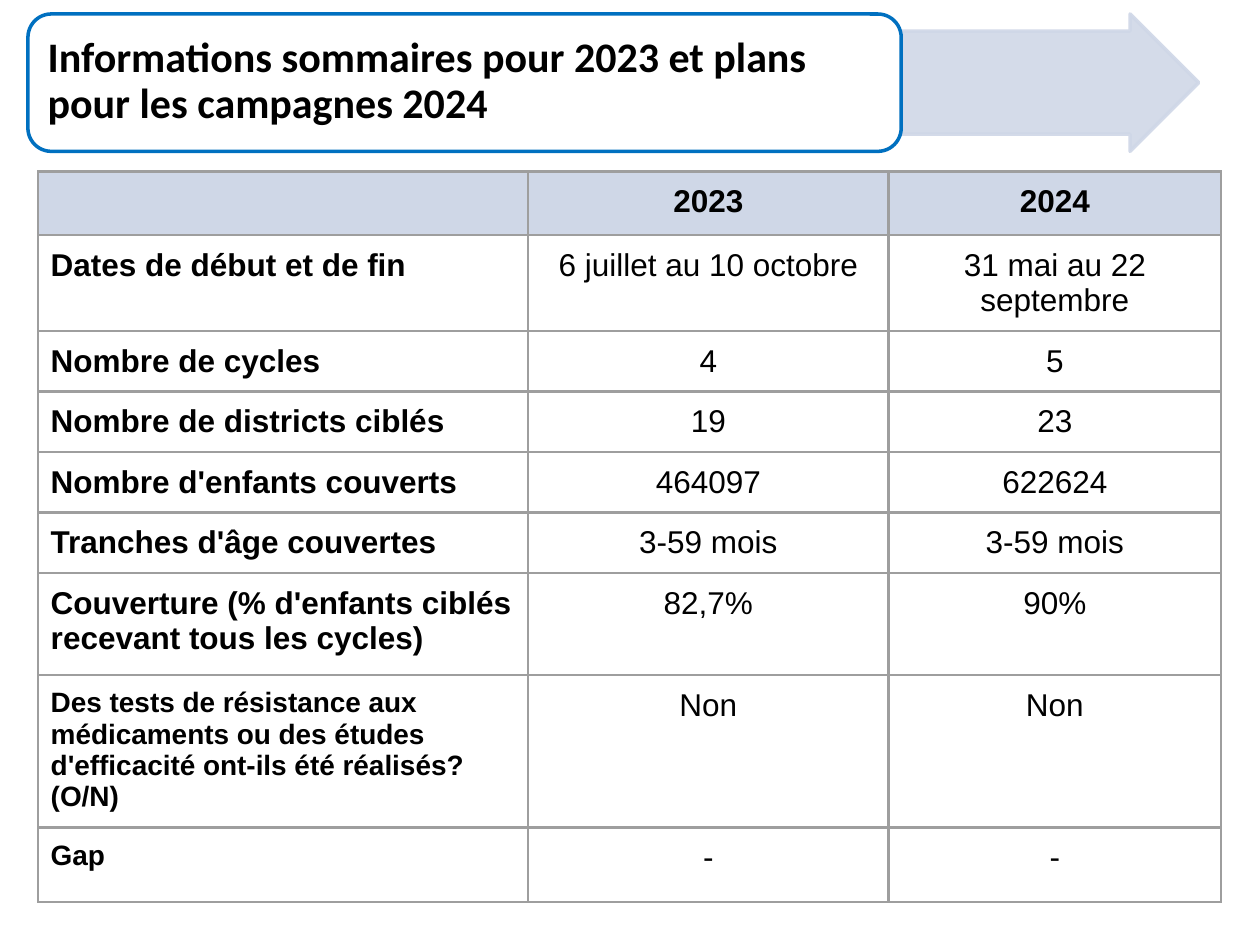
from lxml import etree
from pptx import Presentation
from pptx.dml.color import RGBColor
from pptx.enum import shapes, text
from pptx.oxml.ns import qn
from pptx.util import Pt

PALE_BLUE = "CFD7E7"
BLUE = "0070C0"
GREY = "9E9E9E"
WHITE = "FFFFFF"
BLACK = "000000"

COLUMN_WIDTHS = [280, 206, 190]
ROW_HEIGHTS = [34.6, 54.8, 34.6, 34.6, 34.6, 34.6, 58.3, 87.1, 42.5]
ROWS = [
    ("", "2023", "2024"),
    ("Dates de début et de fin", "6 juillet au 10 octobre", "31 mai au 22 septembre"),
    ("Nombre de cycles", "4", "5"),
    ("Nombre de districts ciblés", "19", "23"),
    ("Nombre d'enfants couverts", "464097", "622624"),
    ("Tranches d'âge couvertes", "3-59 mois", "3-59 mois"),
    ("Couverture (% d'enfants ciblés recevant tous les cycles)", "82,7%", "90%"),
    ("Des tests de résistance aux médicaments ou des études d'efficacité "
     "ont-ils été réalisés? (O/N)", "Non", "Non"),
    ("Gap", "-", "-"),
]
SMALL_LABEL_ROWS = (7, 8)


def color(hex_string):
    return RGBColor.from_string(hex_string)


def write(frame, content, size=18, font="Arial", bold=False,
          align=text.PP_ALIGN.LEFT, line_spacing=None):
    paragraph = frame.paragraphs[0]
    paragraph.alignment = align
    paragraph.line_spacing = line_spacing
    paragraph.font.size = Pt(size)
    if content:
        run = paragraph.add_run()
        run.text = content
        run.font.size = Pt(size)
        run.font.name = font
        run.font.bold = bold
        run.font.color.rgb = color(BLACK)


def set_opacity(color_format_parent, percent):
    for solid in color_format_parent.iter(qn("a:srgbClr")):
        etree.SubElement(solid, qn("a:alpha"), val=str(percent * 1000))


def add_banner_shape(slide, kind, box, fill, line, adjustments):
    shape = slide.shapes.add_shape(kind, *map(Pt, box))
    shape.shadow.inherit = False
    shape.fill.solid()
    shape.fill.fore_color.rgb = color(fill)
    shape.line.color.rgb = color(line)
    shape.line.width = Pt(2)
    for index, value in enumerate(adjustments):
        shape.adjustments[index] = value
    return shape


def place_title(slide, content, box):
    title = slide.shapes.title
    title.left, title.top, title.width, title.height = map(Pt, box)
    frame = title.text_frame
    frame.word_wrap = True
    frame.auto_size = text.MSO_AUTO_SIZE.NONE
    frame.vertical_anchor = text.MSO_ANCHOR.MIDDLE
    write(frame, content, size=24, font="Calibri", bold=True, line_spacing=0.9)
    # Bring the title in front of the banner.
    title.element.getparent().append(title.element)


def set_borders(cell, hex_string, width):
    properties = cell._tc.get_or_add_tcPr()
    for index, side in enumerate(("a:lnL", "a:lnR", "a:lnT", "a:lnB")):
        line = etree.Element(qn(side), w=str(Pt(width)))
        fill = etree.SubElement(line, qn("a:solidFill"))
        etree.SubElement(fill, qn("a:srgbClr"), val=hex_string)
        properties.insert(index, line)


def format_cell(cell, fill):
    cell.margin_left = cell.margin_right = Pt(7.2)
    cell.margin_top = cell.margin_bottom = Pt(7.2)
    cell.vertical_anchor = text.MSO_ANCHOR.TOP
    if fill:
        cell.fill.solid()
        cell.fill.fore_color.rgb = color(fill)
    else:
        cell.fill.background()
    set_borders(cell, GREY, 1.5)


def add_campaign_table(slide, left, top):
    table = slide.shapes.add_table(
        len(ROWS), len(COLUMN_WIDTHS), Pt(left), Pt(top),
        Pt(sum(COLUMN_WIDTHS)), Pt(sum(ROW_HEIGHTS))).table
    table.horz_banding = False
    table.first_row = False
    for column, width in zip(table.columns, COLUMN_WIDTHS):
        column.width = Pt(width)
    for row_index, (row, height) in enumerate(zip(ROWS, ROW_HEIGHTS)):
        table.rows[row_index].height = Pt(height)
        for column_index, content in enumerate(row):
            cell = table.cell(row_index, column_index)
            is_header, is_label = row_index == 0, column_index == 0
            format_cell(cell, PALE_BLUE if is_header else None)
            write(cell.text_frame, content,
                  size=16 if is_label and row_index in SMALL_LABEL_ROWS else 18,
                  bold=is_header or is_label,
                  align=text.PP_ALIGN.LEFT if is_label else text.PP_ALIGN.CENTER)


def main():
    presentation = Presentation()
    presentation.slide_width, presentation.slide_height = Pt(720), Pt(540)
    slide = presentation.slides.add_slide(presentation.slide_layouts[5])

    arrow = add_banner_shape(slide, shapes.MSO_SHAPE.RIGHT_ARROW, (515, 8, 170, 78.5),
                             PALE_BLUE, PALE_BLUE, (0.75, 0.5))
    set_opacity(arrow.element.spPr, 89)
    add_banner_shape(slide, shapes.MSO_SHAPE.ROUNDED_RECTANGLE, (16, 8, 499, 78.5),
                     WHITE, BLUE, (0.17,))
    place_title(slide, "Informations sommaires pour 2023 et plans pour les campagnes 2024",
                (20, 11.5, 491, 70.5))
    add_campaign_table(slide, 21.8, 98)

    presentation.save("out.pptx")


if __name__ == "__main__":
    main()
